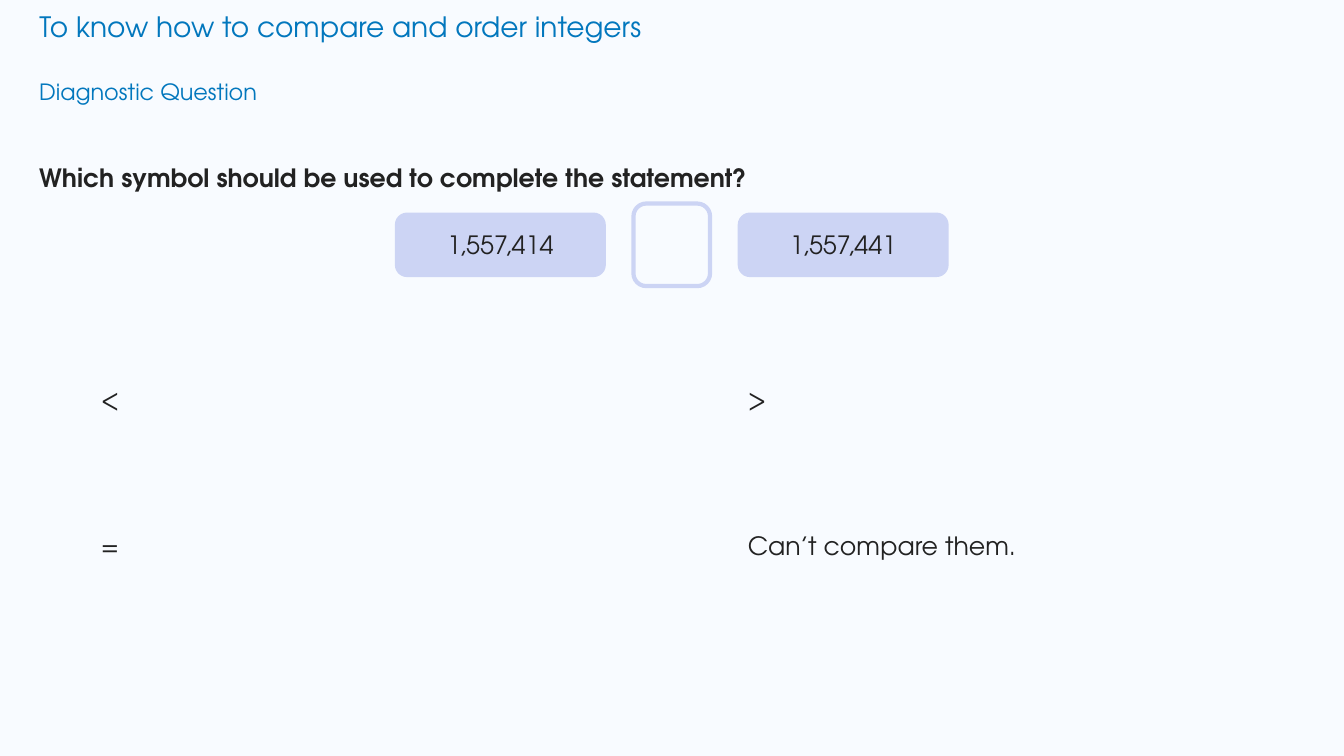
from lxml.etree import SubElement
from pptx import Presentation
from pptx.dml.color import RGBColor
from pptx.enum.shapes import MSO_SHAPE
from pptx.enum.text import MSO_ANCHOR, MSO_AUTO_SIZE, PP_ALIGN
from pptx.oxml.ns import qn
from pptx.util import Cm, Pt

COLORS = {
    "background": "F8FBFF",
    "heading": "0277BD",
    "text": "222222",
    "card": "CCD4F4",
}
FONT = "TeX Gyre Adventor"


def rgb(name):
    return RGBColor.from_string(COLORS[name])


def place(part, left, top, width, height):
    part.left, part.top = Cm(left), Cm(top)
    part.width, part.height = Cm(width), Cm(height)


def write(part, text, size=18, color="text", bold=False, spacing=1.0,
          align=PP_ALIGN.LEFT, anchor=MSO_ANCHOR.TOP):
    frame = part.text_frame
    frame.word_wrap = True
    frame.auto_size = MSO_AUTO_SIZE.NONE
    frame.vertical_anchor = anchor
    frame.text = text
    paragraph = frame.paragraphs[0]
    properties = paragraph._p.get_or_add_pPr()
    properties.set("marL", "0")
    properties.set("indent", "0")
    SubElement(properties, qn("a:buNone"))
    paragraph.alignment = align
    paragraph.line_spacing = spacing
    paragraph.space_before = Pt(0)
    font = paragraph.font
    font.name, font.size, font.bold = FONT, Pt(size), bold
    font.color.rgb = rgb(color)


def add_line_of_text(slide, box, text, **style):
    line = slide.shapes.add_textbox(*map(Cm, box))
    write(line, text, **style)


def add_heading(slide, left, top):
    place(slide.shapes.title, left, top, 31.34, 1.12)
    write(slide.shapes.title, "To know how to compare and order integers",
          size=20, color="heading")
    add_line_of_text(slide, (left, top + 1.75, 8.74, 0.94),
                     "Diagnostic Question", size=16, color="heading")


def add_rounded_box(slide, left, middle, width, height):
    box = slide.shapes.add_shape(
        MSO_SHAPE.ROUNDED_RECTANGLE,
        Cm(left), Cm(middle - height / 2), Cm(width), Cm(height))
    box.shadow.inherit = False
    box.fill.background()
    box.line.color.rgb = rgb("card")
    box.line.width = Pt(3)
    return box


def add_statement(slide, center, middle):
    """Place two number cards around an empty answer box."""
    card_width, answer_width, gap = 5.21, 1.93, 0.75
    answer_left = center - answer_width / 2
    cards = [("1,557,414", answer_left - gap - card_width),
             ("1,557,441", answer_left + answer_width + gap)]
    add_rounded_box(slide, answer_left, middle, answer_width, 2.08)
    for number, left in cards:
        card = add_rounded_box(slide, left, middle, card_width, 1.52)
        card.fill.solid()
        card.fill.fore_color.rgb = rgb("card")
        write(card, number, align=PP_ALIGN.CENTER, anchor=MSO_ANCHOR.MIDDLE)


def fill_options(slide, left, top):
    """Lay the four answers out in two columns, filled downwards."""
    column_step, row_step = 16.3, 3.68
    for index, answer in enumerate(["<", "=", ">", "Can’t compare them."]):
        column, row = divmod(index, 2)
        option = slide.placeholders[index + 1]
        place(option, left + column * column_step, top + row * row_step,
              14.4, 0.94)
        write(option, answer, spacing=0.9)


def build_question_slide(presentation):
    comparison_layout = presentation.slide_layouts[4]
    slide = presentation.slides.add_slide(comparison_layout)
    slide.background.fill.solid()
    slide.background.fill.fore_color.rgb = rgb("background")
    add_heading(slide, 0.74, 0.1)
    add_line_of_text(slide, (0.74, 3.58, 32.61, 1.52),
                     "Which symbol should be used to complete the statement?",
                     bold=True, spacing=1.5)
    add_statement(slide, 16.93, 6.17)
    fill_options(slide, 2.29, 9.63)


def main():
    presentation = Presentation()
    presentation.slide_width, presentation.slide_height = Cm(33.87), Cm(19.05)
    build_question_slide(presentation)
    presentation.save("out.pptx")


if __name__ == "__main__":
    main()
